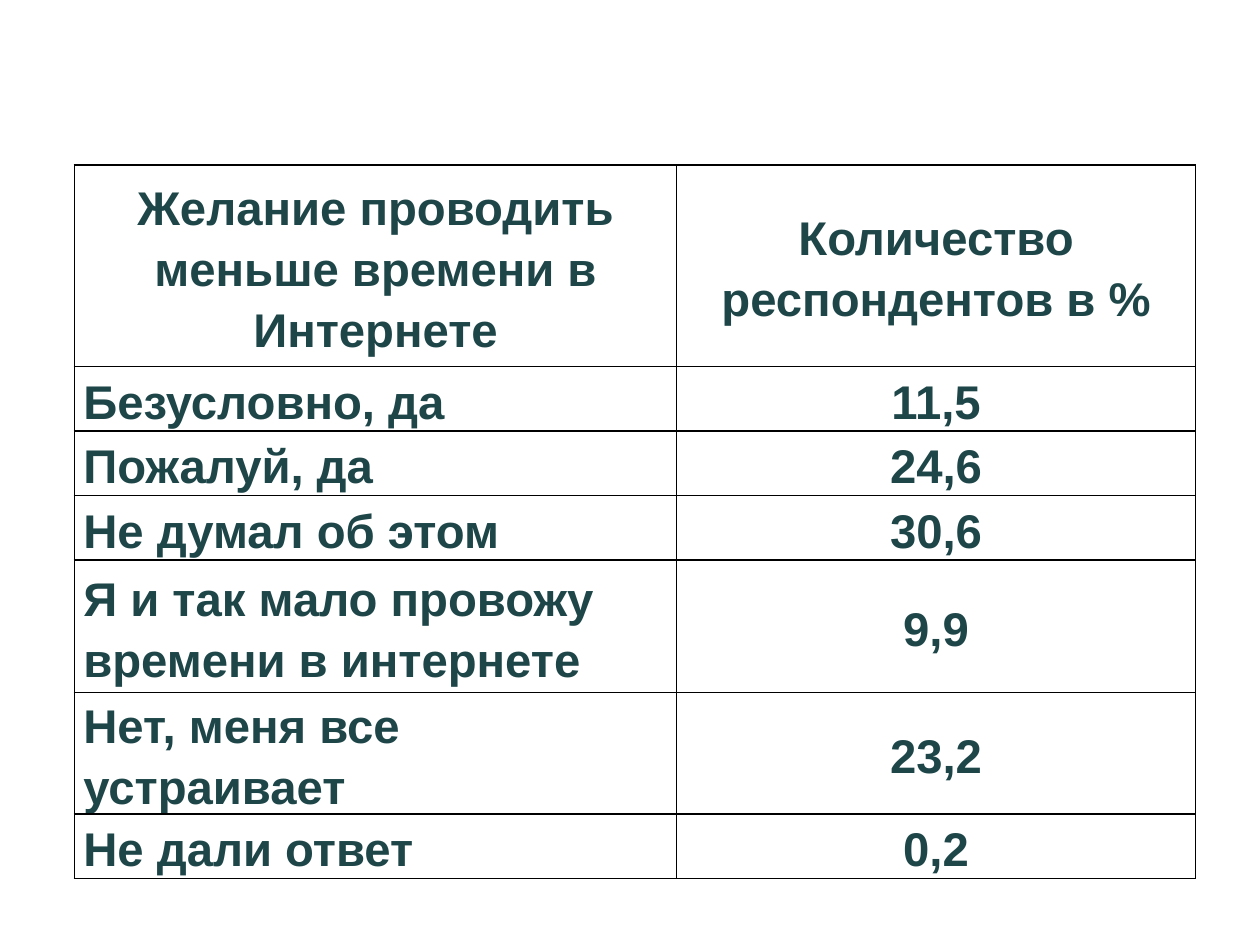
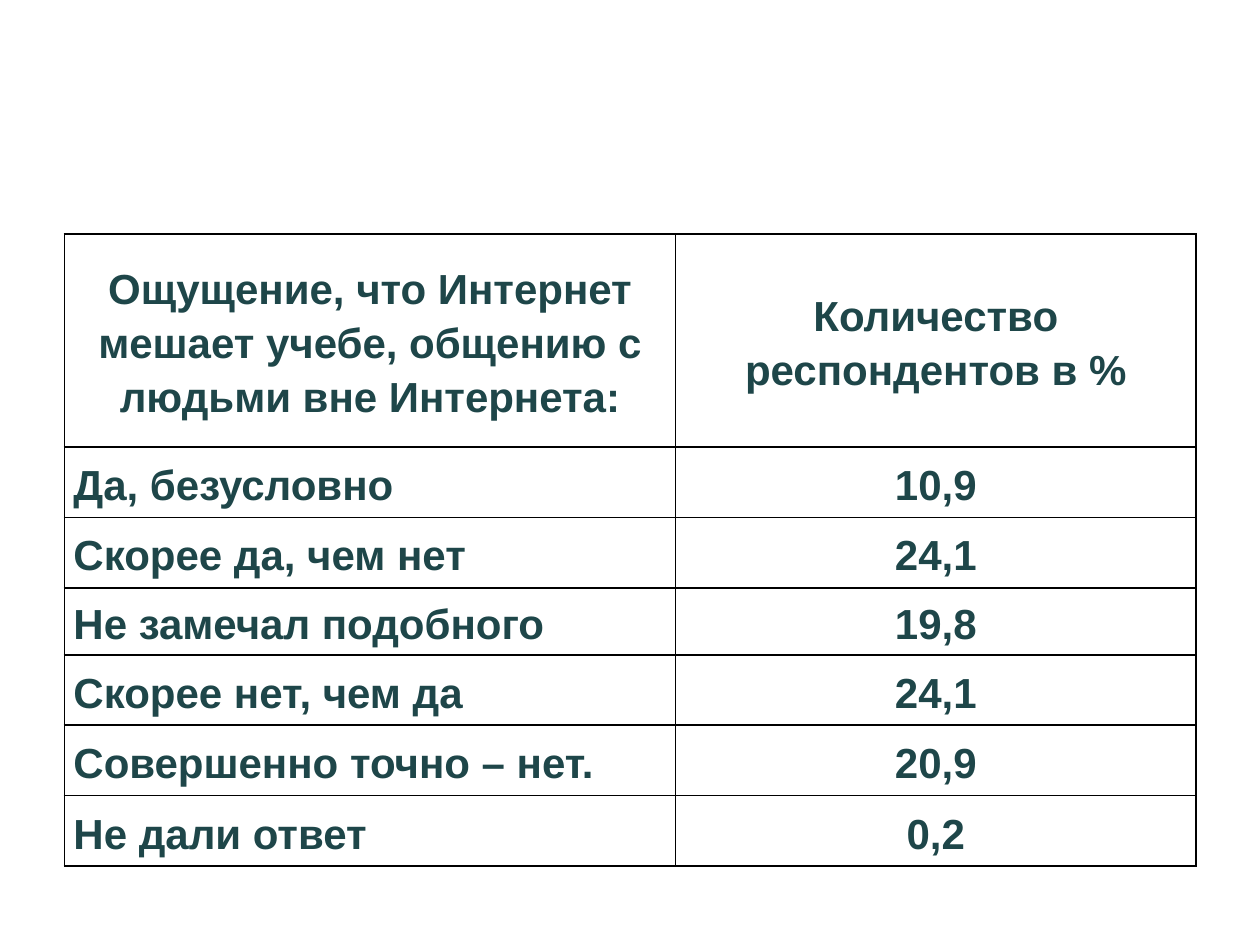
from dataclasses import dataclass

from lxml.etree import SubElement
from pptx import Presentation
from pptx.dml.color import RGBColor
from pptx.enum.text import MSO_ANCHOR, PP_ALIGN
from pptx.oxml.ns import qn
from pptx.util import Cm, Pt

SHARE_HEADING = "Количество респондентов в %"

# Positions, column widths and row heights are in centimetres.
SURVEYS = [
    dict(
        left=1.5, top=3.33, columns=(12.14, 10.46), size=27,
        heights=(4.06, 1.3, 1.3, 1.3, 2.67, 2.41, 1.3),
        rows=[
            ("Желание проводить меньше времени в Интернете", SHARE_HEADING),
            ("Безусловно, да", "11,5"),
            ("Пожалуй, да", "24,6"),
            ("Не думал об этом", "30,6"),
            ("Я и так мало провожу времени в интернете", "9,9"),
            ("Нет, меня все устраивает", "23,2"),
            ("Не дали ответ", "0,2"),
        ],
    ),
    dict(
        left=1.3, top=4.72, columns=(12.32, 10.49), size=24,
        heights=(4.29, 1.42, 1.42, 1.35, 1.42, 1.42, 1.42),
        rows=[
            ("Ощущение, что Интернет мешает учебе, общению с людьми вне Интернета:",
             SHARE_HEADING),
            ("Да, безусловно", "10,9"),
            ("Скорее да, чем нет", "24,1"),
            ("Не замечал подобного", "19,8"),
            ("Скорее нет, чем да", "24,1"),
            ("Совершенно точно – нет.", "20,9"),
            ("Не дали ответ", "0,2"),
        ],
    ),
]


@dataclass(frozen=True)
class Theme:
    font: str = "Arial"
    text: RGBColor = RGBColor(0x1E, 0x46, 0x49)
    border: str = "000000"
    border_width: int = Pt(1)
    line_spacing: float = 1.15
    side_margin: int = Cm(0.18)


THEME = Theme()


def add_borders(cell):
    tc_pr = cell._tc.get_or_add_tcPr()
    for side in ("lnL", "lnR", "lnT", "lnB"):
        ln = SubElement(tc_pr, qn(f"a:{side}"), w=str(int(THEME.border_width)))
        fill = SubElement(ln, qn("a:solidFill"))
        SubElement(fill, qn("a:srgbClr"), val=THEME.border)


def fill_cell(cell, text, size, align):
    add_borders(cell)
    cell.fill.background()
    cell.vertical_anchor = MSO_ANCHOR.MIDDLE
    cell.margin_left = cell.margin_right = THEME.side_margin
    cell.margin_top = cell.margin_bottom = 0
    cell.text = text
    p = cell.text_frame.paragraphs[0]
    p.alignment = align
    p.line_spacing = THEME.line_spacing
    p.font.name = THEME.font
    p.font.size = Pt(size)
    p.font.bold = True
    p.font.color.rgb = THEME.text


def add_survey(s, survey):
    rows, columns, heights = survey["rows"], survey["columns"], survey["heights"]
    table = s.shapes.add_table(
        len(rows), len(columns), Cm(survey["left"]), Cm(survey["top"]),
        Cm(sum(columns)), Cm(sum(heights))).table
    table.first_row = table.horz_banding = False
    for column, width in zip(table.columns, columns):
        column.width = Cm(width)
    for row, height in zip(table.rows, heights):
        row.height = Cm(height)
    for i, values in enumerate(rows):
        for j, text in enumerate(values):
            is_answer = i > 0 and j == 0
            align = PP_ALIGN.LEFT if is_answer else PP_ALIGN.CENTER
            fill_cell(table.cell(i, j), text, survey["size"], align)


def main():
    prs = Presentation()
    prs.slide_width, prs.slide_height = Cm(25.4), Cm(19.05)
    blank = prs.slide_layouts[6]
    for survey in SURVEYS:
        add_survey(prs.slides.add_slide(blank), survey)
    prs.save("out.pptx")


if __name__ == "__main__":
    main()
